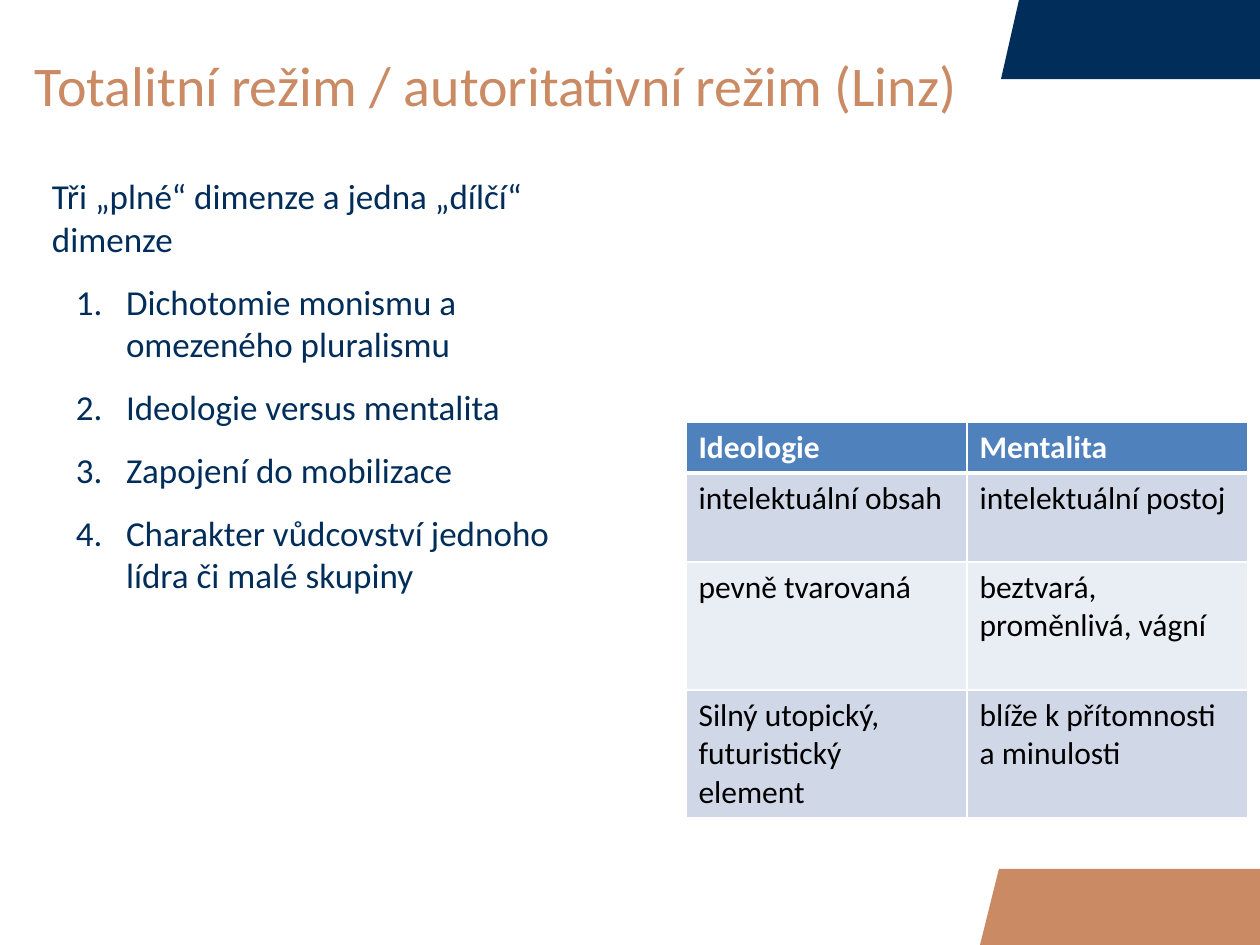
import pptx
import pptx.dml.color
import pptx.enum.text
import pptx.oxml
import pptx.oxml.ns
import pptx.util

SCALE = 914400 / 126
FONT = "Calibri"
COLORS = {
    "navy": "002D5A",
    "copper": "CA8A64",
    "header": "4F81BD",
    "band_dark": "D0D8E8",
    "band_light": "E9EDF4",
    "white": "FFFFFF",
    "black": "000000",
}
DIMENSIONS = [
    "Dichotomie monismu a omezeného pluralismu",
    "Ideologie versus mentalita",
    "Zapojení do mobilizace",
    "Charakter vůdcovství jednoho lídra či malé skupiny",
]
COMPARISON = [
    ("Ideologie", "Mentalita"),
    ("intelektuální obsah", "intelektuální postoj"),
    ("pevně tvarovaná", "beztvará, proměnlivá, vágní"),
    ("Silný utopický, futuristický element", "blíže k přítomnosti a minulosti"),
]
ROW_HEIGHTS = [51, 89, 128, 128]
COLUMN_WIDTH = 281


def px(length):
    """Turn pixels into EMU."""
    return pptx.util.Emu(round(length * SCALE))


def rgb(name):
    """Look up a named colour."""
    return pptx.dml.color.RGBColor.from_string(COLORS[name])


def write_text(para, text, size=20, color="navy", bold=False):
    """Add formatted text to a paragraph."""
    span = para.add_run()
    span.text = text
    span.font.name = FONT
    span.font.size = pptx.util.Pt(size)
    span.font.bold = bold
    span.font.color.rgb = rgb(color)


def add_box(page, left, top, width, height, side=13, anchor="TOP"):
    """Add a wrapping text box and return its text frame."""
    frame = page.shapes.add_textbox(px(left), px(top), px(width), px(height)).text_frame
    frame.word_wrap = True
    frame.vertical_anchor = pptx.enum.text.MSO_ANCHOR[anchor]
    frame.margin_left = frame.margin_right = px(side)
    frame.margin_top = frame.margin_bottom = px(6)
    return frame


def add_corner(page, left, top, bottom, slant, color):
    """Add a slanted block reaching the right edge of the page."""
    builder = page.shapes.build_freeform(left, bottom, scale=SCALE)
    builder.add_line_segments([(left + slant, top), (1260, top), (1260, bottom)], close=True)
    shape = builder.convert_to_shape()
    shape.shadow.inherit = False
    shape.fill.solid()
    shape.fill.fore_color.rgb = rgb(color)
    shape.line.fill.background()


def add_numbered(frame, text):
    """Add an automatically numbered paragraph with a hanging indent."""
    para = frame.add_paragraph()
    para.level = 1
    para.space_before = pptx.util.Pt(12)
    properties = para._p.get_or_add_pPr()
    properties.set("marL", str(px(74)))
    properties.set("indent", str(px(-50)))
    number = pptx.oxml.parse_xml(
        f'<a:buAutoNum {pptx.oxml.ns.nsdecls("a")} type="arabicPeriod"/>')
    properties.append(number)
    write_text(para, text)


def set_borders(cell, bottom):
    """Draw white borders around a cell, with a given bottom width in points."""
    properties = cell._tc.get_or_add_tcPr()
    widths = {"lnL": 1, "lnR": 1, "lnT": 1, "lnB": bottom}
    for index, (side, width) in enumerate(widths.items()):
        border = pptx.oxml.parse_xml(
            f'<a:{side} {pptx.oxml.ns.nsdecls("a")} w="{pptx.util.Pt(width)}"><a:solidFill>'
            f'<a:srgbClr val="{COLORS["white"]}"/></a:solidFill></a:{side}>')
        properties.insert(index, border)


def add_comparison(page, left, top):
    """Add the table comparing ideology with mentality."""
    table = page.shapes.add_table(
        len(COMPARISON), 2, px(left), px(top),
        px(2 * COLUMN_WIDTH), px(sum(ROW_HEIGHTS))).table
    table.horz_banding = False
    for column in table.columns:
        column.width = px(COLUMN_WIDTH)
    for index, (texts, height) in enumerate(zip(COMPARISON, ROW_HEIGHTS)):
        header = index == 0
        band = "band_dark" if index % 2 else "band_light"
        table.rows[index].height = px(height)
        for cell, text in zip(table.rows[index].cells, texts):
            cell.fill.solid()
            cell.fill.fore_color.rgb = rgb("header" if header else band)
            set_borders(cell, bottom=3 if header else 1)
            write_text(cell.text_frame.paragraphs[0], text, size=18, bold=header,
                       color="white" if header else "black")


def main():
    """Build and save the slide."""
    deck = pptx.Presentation()
    deck.slide_width, deck.slide_height = px(1260), px(945)
    page = deck.slides.add_slide(deck.slide_layouts[6])
    add_corner(page, 1001, 0, 79, 18, "navy")
    add_corner(page, 980, 869, 945, 19, "copper")
    title = add_box(page, 0, 0, 1260, 169, side=35, anchor="MIDDLE")
    write_text(title.paragraphs[0], "Totalitní režim / autoritativní režim (Linz)",
               size=32, color="copper")
    body = add_box(page, 39, 169, 547, 716)
    write_text(body.paragraphs[0], "Tři „plné“ dimenze a jedna „dílčí“ dimenze")
    for text in DIMENSIONS:
        add_numbered(body, text)
    add_comparison(page, 686, 422)
    deck.save("out.pptx")


if __name__ == "__main__":
    main()
